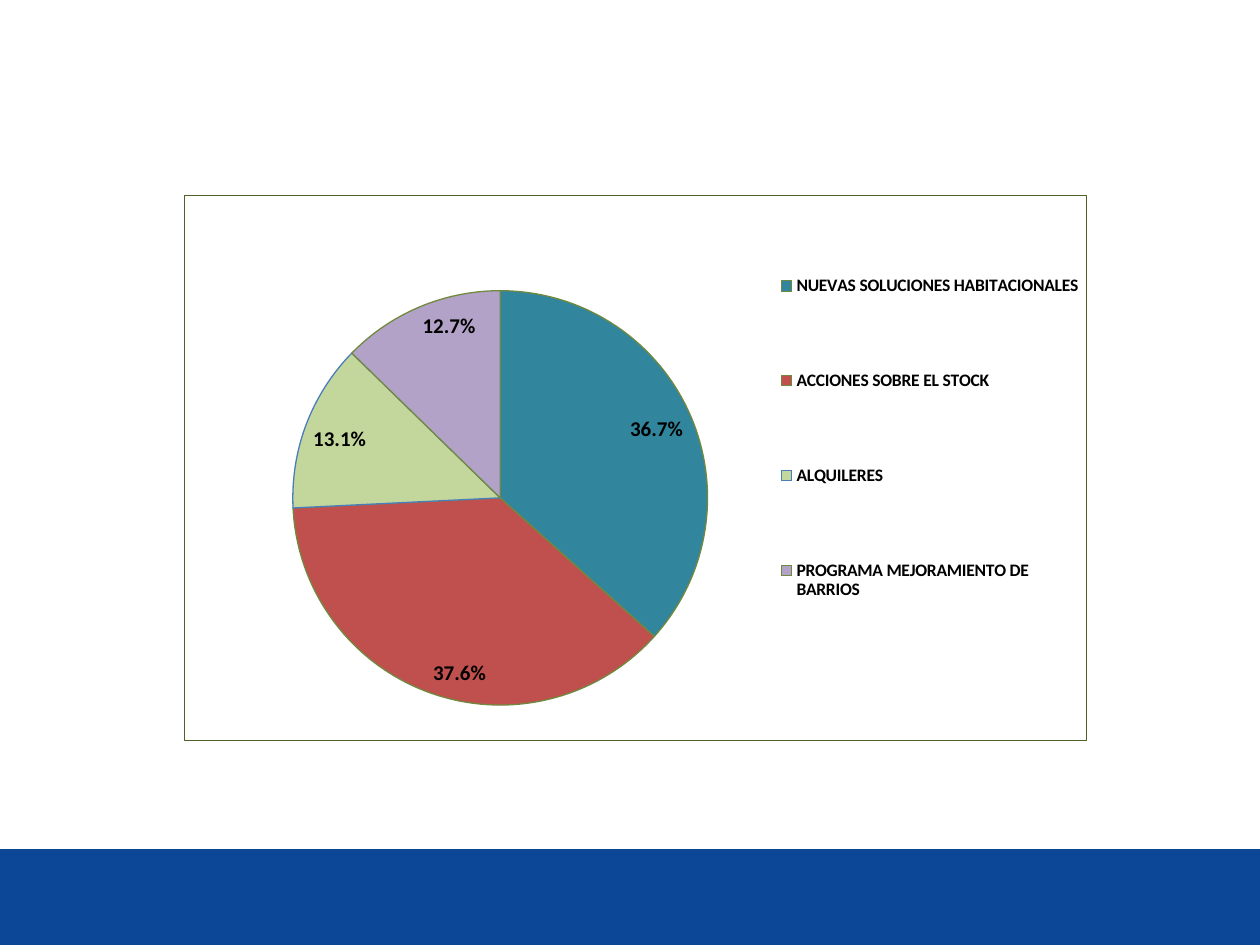
from typing import NamedTuple

from lxml import etree
from pptx import Presentation
from pptx.chart.data import CategoryChartData
from pptx.dml.color import RGBColor
from pptx.enum.chart import XL_CHART_TYPE, XL_LABEL_POSITION, XL_LEGEND_POSITION
from pptx.enum.shapes import MSO_SHAPE
from pptx.oxml import parse_xml
from pptx.oxml.ns import nsdecls, qn
from pptx.util import Emu, Pt

PIE = XL_CHART_TYPE.PIE
INSIDE = XL_LABEL_POSITION.INSIDE_END
RIGHT = XL_LEGEND_POSITION.RIGHT
RECT = MSO_SHAPE.RECTANGLE

BLUE = RGBColor(0x0B, 0x46, 0x97)
BLACK = RGBColor(0, 0, 0)
FRAME = RGBColor(0x4F, 0x62, 0x28)
OLIVE = RGBColor(0x71, 0x89, 0x3F)
SKY = RGBColor(0x4A, 0x7E, 0xBB)
TEAL = RGBColor(0x31, 0x85, 0x9C)
RED = RGBColor(0xC0, 0x50, 0x4D)
GREEN = RGBColor(0xC3, 0xD6, 0x9B)
MAUVE = RGBColor(0xB3, 0xA2, 0xC7)

WIDE, HIGH = 1260, 945


class Slice(NamedTuple):
    label: str
    share: float
    fill: RGBColor
    line: RGBColor


class Box(NamedTuple):
    x: float
    y: float
    w: float
    h: float


SLICES = [
    Slice("NUEVAS SOLUCIONES HABITACIONALES", 0.367, TEAL, OLIVE),
    Slice("ACCIONES SOBRE EL STOCK", 0.376, RED, OLIVE),
    Slice("ALQUILERES", 0.131, GREEN, SKY),
    Slice("PROGRAMA MEJORAMIENTO DE BARRIOS", 0.127, MAUVE, OLIVE),
]


def px(count: int) -> Emu:
    return Emu(round(count * 914400 / 126))


def set_font(font, size: int) -> None:
    font.name = "Calibri"
    font.size = Pt(size)
    font.bold = True
    font.color.rgb = BLACK


def make_layout(box: Box, inner: bool = False):
    """Build a manual layout in fractions of the chart area."""
    layout = etree.Element(qn("c:layout"))
    manual = etree.SubElement(layout, qn("c:manualLayout"))
    parts = [("layoutTarget", "inner")] if inner else []
    parts += [("xMode", "edge"), ("yMode", "edge")]
    parts += zip("xywh", box)
    for name, val in parts:
        etree.SubElement(manual, qn(f"c:{name}"), val=str(val))
    return layout


def draw_band(slide) -> None:
    band = slide.shapes.add_shape(RECT, 0, px(849), px(WIDE), px(HIGH - 849))
    band.shadow.inherit = False
    band.fill.solid()
    band.fill.fore_color.rgb = BLUE
    band.line.fill.background()


def draw_pie(slide, slices: list[Slice]) -> None:
    data = CategoryChartData(number_format="0.0%")
    data.categories = [part.label for part in slices]
    data.add_series("Series 1", [part.share for part in slices])
    chart = slide.shapes.add_chart(
        PIE, px(184), px(195), px(903), px(546), data).chart
    chart.has_title = False
    set_font(chart.font, 10)

    # Slices and their labels
    plot = chart.plots[0]
    plot.vary_by_categories = True
    for idx, part in enumerate(slices):
        style = plot.series[0].points[idx].format
        style.fill.solid()
        style.fill.fore_color.rgb = part.fill
        style.line.color.rgb = part.line
        style.line.width = Pt(0.75)
    plot.has_data_labels = True
    labels = plot.data_labels
    labels.show_value = True
    labels.show_percentage = False
    labels.number_format = "0.0%"
    labels.number_format_is_linked = False
    labels.position = INSIDE
    set_font(labels.font, 12)

    # Legend
    chart.has_legend = True
    legend = chart.legend
    legend.position = RIGHT
    legend.include_in_layout = False
    set_font(legend.font, 10)

    # Places of plot and legend
    root = chart._chartSpace
    area = root.find(".//" + qn("c:plotArea"))
    key = root.find(".//" + qn("c:legend"))
    for old in area.findall(qn("c:layout")) + key.findall(qn("c:layout")):
        old.getparent().remove(old)
    area.insert(0, make_layout(Box(0.12, 0.17, 0.46, 0.77), inner=True))
    key.find(qn("c:legendPos")).addnext(
        make_layout(Box(0.66, 0.01, 0.34, 0.87)))

    # Chart border
    root.find(qn("c:chart")).addnext(parse_xml(
        f'<c:spPr {nsdecls("c", "a")}><a:noFill/><a:ln w="{Pt(0.75)}">'
        f'<a:solidFill><a:srgbClr val="{FRAME}"/></a:solidFill>'
        '</a:ln></c:spPr>'))


def main() -> None:
    deck = Presentation()
    deck.slide_width, deck.slide_height = px(WIDE), px(HIGH)
    slide = deck.slides.add_slide(deck.slide_layouts[6])
    draw_band(slide)
    draw_pie(slide, SLICES)
    deck.save("out.pptx")


if __name__ == "__main__":
    main()
